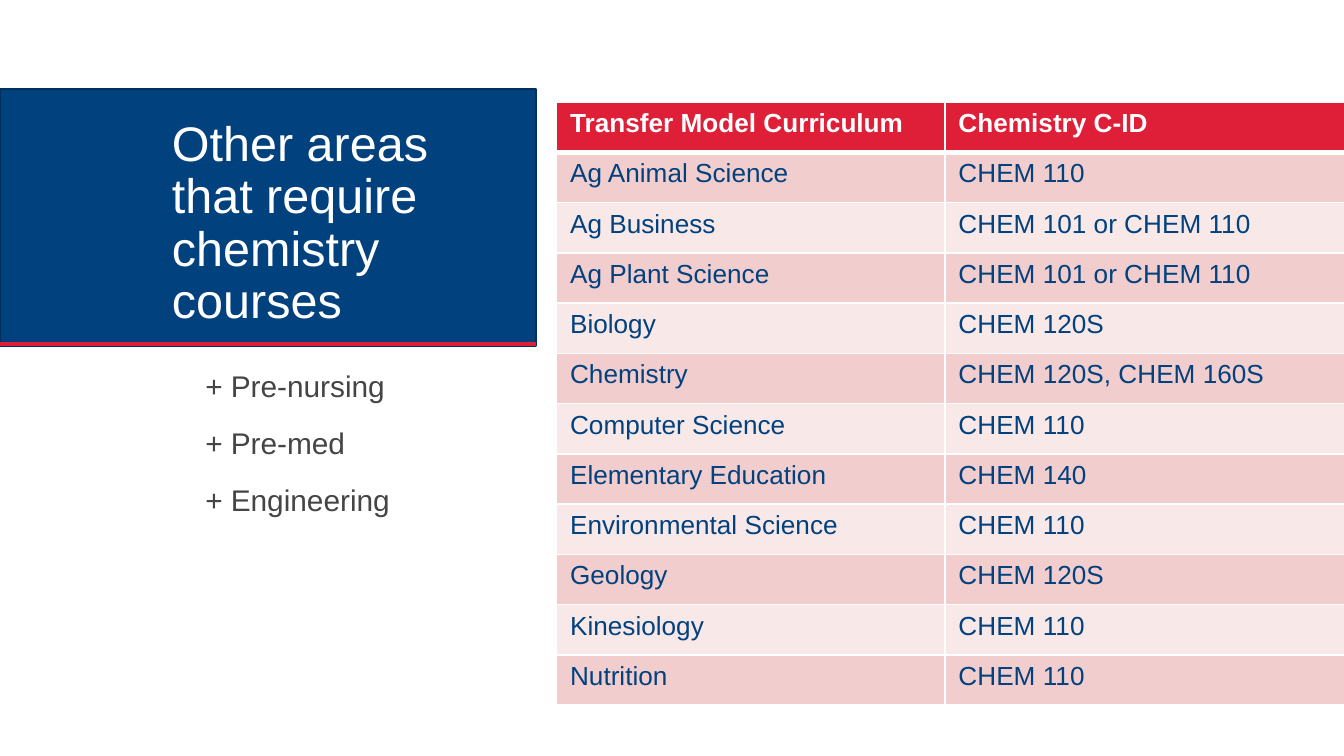
"""Build a slide that lists the transfer curricula requiring chemistry courses."""
from pptx import Presentation
from pptx.dml.color import RGBColor
from pptx.enum.shapes import MSO_CONNECTOR, MSO_SHAPE
from pptx.enum.text import MSO_ANCHOR, MSO_AUTO_SIZE, PP_ALIGN
from pptx.oxml import parse_xml
from pptx.oxml.ns import nsdecls, qn
from pptx.util import Cm, Pt

HEADING = "Other areas that require chemistry courses"
PROGRAMS = ["+ Pre-nursing", "+ Pre-med", "+ Engineering"]
COURSES = [
    ("Transfer Model Curriculum", "Chemistry C-ID"),
    ("Ag Animal Science", "CHEM 110"),
    ("Ag Business", "CHEM 101 or CHEM 110"),
    ("Ag Plant Science", "CHEM 101 or CHEM 110"),
    ("Biology", "CHEM 120S"),
    ("Chemistry", "CHEM 120S, CHEM 160S"),
    ("Computer Science", "CHEM 110"),
    ("Elementary Education", "CHEM 140"),
    ("Environmental Science", "CHEM 110"),
    ("Geology", "CHEM 120S"),
    ("Kinesiology", "CHEM 110"),
    ("Nutrition", "CHEM 110"),
]

WHITE = RGBColor(0xFF, 0xFF, 0xFF)
NAVY = RGBColor(0x00, 0x41, 0x7E)
DARK_NAVY = RGBColor(0x00, 0x2F, 0x5B)
RED = RGBColor(0xDE, 0x1F, 0x37)
PINK = RGBColor(0xF2, 0xCD, 0xCE)
PALE_PINK = RGBColor(0xF9, 0xE8, 0xE8)
GRAY = RGBColor(0x45, 0x45, 0x45)

PANEL_TOP, PANEL_WIDTH, PANEL_HEIGHT = Cm(1.68), Cm(10.13), Cm(4.85)
RULE_Y = Cm(6.5)
TEXT_LEFT, TEXT_WIDTH = Cm(3), Cm(6.83)
COLUMN_WIDTHS = [Cm(7.34), Cm(7.58)]
ROW_HEIGHT = Cm(0.95)

HEADING_FONT = {"name": "Arial", "size": Pt(26), "bold": False}
PROGRAM_FONT = {"name": "Arial", "size": Pt(16), "bold": False}
HEADER_FONT = {"name": "Arial", "size": Pt(14), "bold": True}
COURSE_FONT = {"name": "Arial", "size": Pt(14), "bold": False}
FRAME_FORMAT = {
    "word_wrap": True,
    "auto_size": MSO_AUTO_SIZE.NONE,
    "margin_left": Cm(0.25),
    "margin_right": Cm(0.25),
    "margin_top": Cm(0.13),
    "margin_bottom": Cm(0.13),
}


def apply(target, values):
    for name, value in values.items():
        setattr(target, name, value)


def write(paragraph, text, font, color):
    run = paragraph.add_run()
    run.text = text
    apply(run.font, font)
    run.font.color.rgb = color


def add_panel(slide):
    panel = slide.shapes.add_shape(
        MSO_SHAPE.RECTANGLE, 0, PANEL_TOP, PANEL_WIDTH, PANEL_HEIGHT)
    panel.shadow.inherit = False
    panel.fill.solid()
    panel.fill.fore_color.rgb = NAVY
    panel.line.color.rgb = DARK_NAVY
    panel.line.width = Pt(1.25)
    rule = slide.shapes.add_connector(
        MSO_CONNECTOR.STRAIGHT, 0, RULE_Y, PANEL_WIDTH, RULE_Y)
    rule.line.color.rgb = RED
    rule.line.width = Pt(2.5)
    rule.element.spPr.append(parse_xml(f"<a:effectLst {nsdecls('a')}/>"))


def add_borders(cell_xml, bottom_width):
    widths = {"lnL": Pt(1), "lnR": Pt(1), "lnT": Pt(1), "lnB": bottom_width}
    properties = cell_xml.get_or_add_tcPr()
    for index, (side, width) in enumerate(widths.items()):
        properties.insert(index, parse_xml(
            f'<a:{side} {nsdecls("a")} w="{width}"><a:solidFill>'
            f'<a:srgbClr val="{WHITE}"/></a:solidFill></a:{side}>'))


def add_courses(slide):
    frame = slide.shapes.add_table(
        len(COURSES), len(COLUMN_WIDTHS), Cm(10.52), Cm(1.93),
        sum(COLUMN_WIDTHS), ROW_HEIGHT * len(COURSES))
    table = frame.table
    for column, width in zip(table.columns, COLUMN_WIDTHS):
        column.width = width
    for row_index, entries in enumerate(COURSES):
        table.rows[row_index].height = ROW_HEIGHT
        if row_index == 0:
            font, color, fill = HEADER_FONT, WHITE, RED
        else:
            font, color = COURSE_FONT, NAVY
            fill = PINK if row_index % 2 else PALE_PINK
        for column_index, entry in enumerate(entries):
            cell = table.cell(row_index, column_index)
            cell.fill.solid()
            cell.fill.fore_color.rgb = fill
            write(cell.text_frame.paragraphs[0], entry, font, color)
    for index, cell_xml in enumerate(frame.element.iter(qn("a:tc"))):
        is_header = index < len(COLUMN_WIDTHS)
        add_borders(cell_xml, Pt(3) if is_header else Pt(1))


def place_heading(slide):
    heading = slide.shapes.title
    apply(heading, {"left": TEXT_LEFT, "top": PANEL_TOP,
                    "width": TEXT_WIDTH, "height": Cm(4.67)})
    apply(heading.text_frame, FRAME_FORMAT)
    heading.text_frame.vertical_anchor = MSO_ANCHOR.BOTTOM
    paragraph = heading.text_frame.paragraphs[0]
    apply(paragraph, {"alignment": PP_ALIGN.LEFT, "line_spacing": 0.9})
    write(paragraph, HEADING, HEADING_FONT, WHITE)
    heading.element.getparent().append(heading.element)


def add_programs(slide):
    programs = slide.shapes.add_textbox(TEXT_LEFT, Cm(6.68), TEXT_WIDTH, Cm(5.94))
    frame = programs.text_frame
    apply(frame, FRAME_FORMAT)
    for index, program in enumerate(PROGRAMS):
        paragraph = frame.add_paragraph() if index else frame.paragraphs[0]
        apply(paragraph, {"line_spacing": 1.2, "space_before": Pt(7.5)})
        write(paragraph, program, PROGRAM_FONT, GRAY)
    for properties in programs.element.iter(qn("a:pPr")):
        properties.set("marL", str(Cm(1.27)))
        properties.set("indent", str(-Cm(0.64)))


def main():
    deck = Presentation()
    deck.slide_width, deck.slide_height = Cm(25.4), Cm(14.29)
    slide = deck.slides.add_slide(deck.slide_layouts[5])
    add_panel(slide)
    add_courses(slide)
    place_heading(slide)
    add_programs(slide)
    deck.save("out.pptx")


if __name__ == "__main__":
    main()
